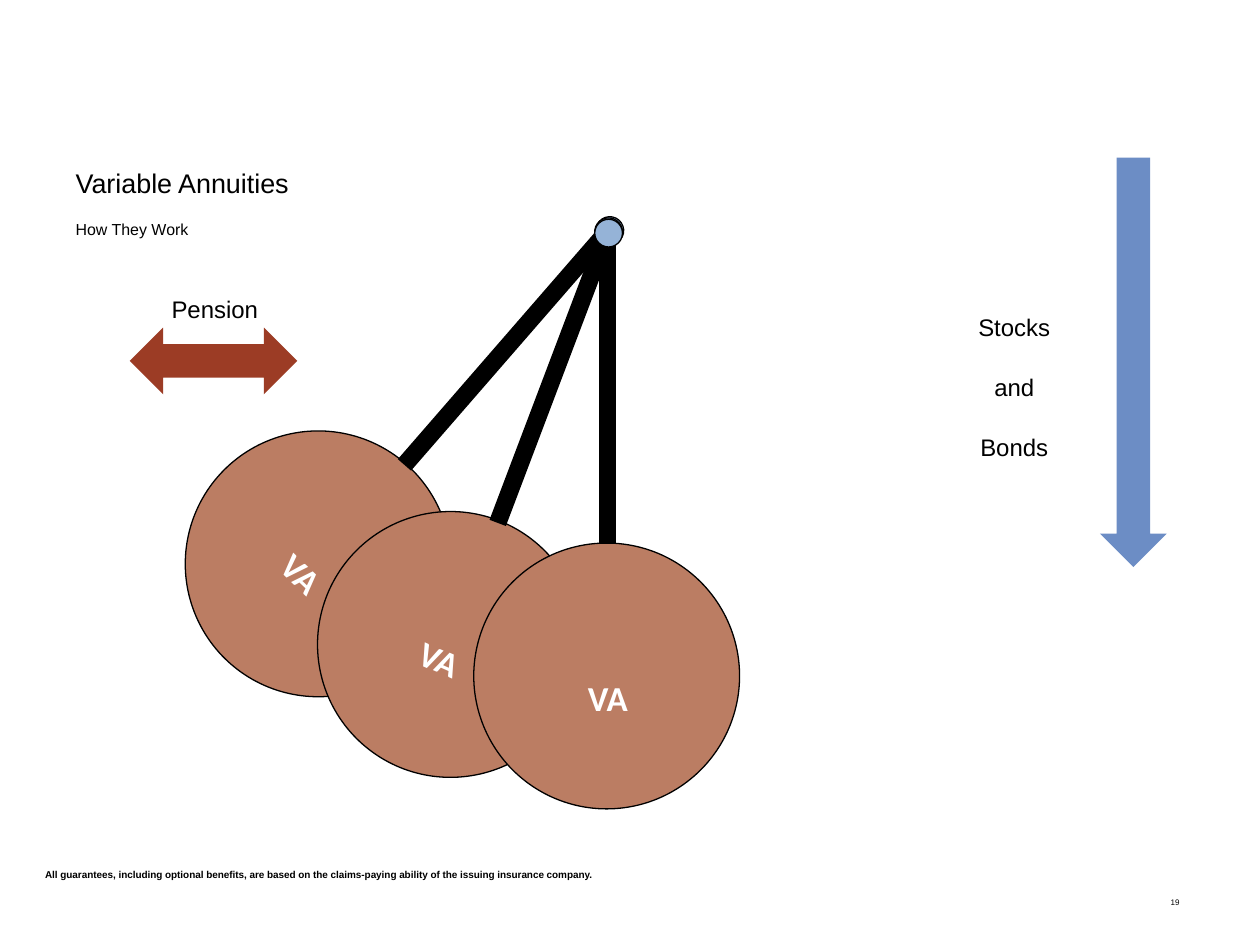
from dataclasses import dataclass

import pptx
import pptx.dml.color
import pptx.enum.shapes
import pptx.enum.text
import pptx.oxml
import pptx.util

Inches, Pt = pptx.util.Inches, pptx.util.Pt
SHAPE = pptx.enum.shapes.MSO_SHAPE
ALIGN = pptx.enum.text.PP_ALIGN
ANCHOR = pptx.enum.text.MSO_ANCHOR

COLORS = {"text": "000000", "label": "FFFFFF", "disc": "BB7D63", "pivot": "95B3D7",
          "market": "6C8DC5", "pension": "9C3C25"}
DISC, PIVOT = 2.11, 0.22
LABEL_W, LABEL_H = 1.43, 0.71


@dataclass
class Pendulum:
    """One position of the swing; points are (x, y) in inches."""
    disc: tuple[float, float]
    arm: tuple[float, float, float, float]
    pivot: tuple[float, float]
    angle: float
    label: tuple[float, float]
    label_angle: float


@dataclass
class Note:
    box: tuple[float, float, float, float]
    lines: list[str]
    size: float
    align: ALIGN = ALIGN.CENTER
    anchor: ANCHOR = ANCHOR.MIDDLE
    font: str = "Arial"
    color: str = "text"
    bold: bool = False
    spacing: float = 1.0
    top: float = 0.05
    bottom: float = 0.05
    rotation: float = 0


PENDULUMS = [
    Pendulum((1.47, 3.42), (4.8, 1.86, 3.21, 3.69), (4.73, 1.72), 40.9, (1.81, 4.06), 43.7),
    Pendulum((2.52, 4.06), (4.81, 1.88, 3.95, 4.15), (4.72, 1.73), 20.7, (2.85, 4.7), 24),
    Pendulum((3.76, 4.31), (4.82, 1.91, 4.82, 4.32), (4.72, 1.74), 0, (4.11, 4.99), 0),
]

NOTES = [
    Note((0, 2.1, 3.41, 0.7), ["Pension"], 13.7),
    Note((6.5, 2.18, 3.1, 1.31), ["Stocks\vand", "Bonds"], 13.7, anchor=ANCHOR.TOP, spacing=2.09),
    Note((0.26, 6.76, 9.5, 0.27),
         ["All guarantees, including optional benefits, are based on the claims-paying "
          "ability of the issuing insurance company."],
         5.7, ALIGN.LEFT, ANCHOR.BOTTOM, bold=True, bottom=0.04),
    Note((7.13, 7, 2.33, 0.5), ["19"], 4.6, ALIGN.RIGHT, ANCHOR.TOP, top=0.12),
]


def rgb(name: str) -> pptx.dml.color.RGBColor:
    return pptx.dml.color.RGBColor.from_string(COLORS[name])


def style_font(font, **values) -> None:
    for name, value in values.items():
        setattr(font, name, value)
    font.color.rgb = rgb("text")


def add_filled(shapes, kind: SHAPE, box: tuple, fill: str, outlined: bool = False,
               rotation: float = 0):
    s = shapes.add_shape(kind, *map(Inches, box))
    s.shadow.inherit = False
    s.rotation = rotation
    s.fill.solid()
    s.fill.fore_color.rgb = rgb(fill)
    if outlined:
        s.line.color.rgb = rgb("text")
        s.line.width = Pt(0.75)
    else:
        s.line.fill.background()
    return s


def add_arm(shapes, points: tuple) -> None:
    c = shapes.add_connector(pptx.enum.shapes.MSO_CONNECTOR.STRAIGHT, *map(Inches, points))
    c.line.color.rgb = rgb("text")
    c.line.width = Pt(10)
    sp_pr = c._element.spPr
    sp_pr.append(pptx.oxml.parse_xml(
        '<a:effectLst xmlns:a="http://schemas.openxmlformats.org/drawingml/2006/main"/>'))


def add_note(shapes, note: Note) -> None:
    s = shapes.add_textbox(*map(Inches, note.box))
    s.rotation = note.rotation
    tf = s.text_frame
    frame = {"word_wrap": True, "vertical_anchor": note.anchor,
             "margin_top": Inches(note.top), "margin_bottom": Inches(note.bottom)}
    for name, value in frame.items():
        setattr(tf, name, value)
    tf.text = "\n".join(note.lines)
    for p in tf.paragraphs:
        p.alignment = note.align
        p.line_spacing = note.spacing
        for r in p.runs:
            style_font(r.font, name=note.font, size=Pt(note.size), bold=note.bold)
            r.font.color.rgb = rgb(note.color)


def add_pendulum(shapes, item: Pendulum) -> None:
    group = shapes.add_group_shape().shapes
    add_filled(group, SHAPE.OVAL, (*item.disc, DISC, DISC), "disc", True, item.angle)
    add_arm(group, item.arm)
    add_filled(group, SHAPE.OVAL, (*item.pivot, PIVOT, PIVOT), "pivot", True, item.angle)
    add_note(group, Note((*item.label, LABEL_W, LABEL_H), ["VA"], 20, anchor=ANCHOR.BOTTOM,
                         font="Calibri", color="label", bold=True, bottom=0,
                         rotation=item.label_angle))


def set_title(title) -> None:
    title.left, title.top, title.width, title.height = map(Inches, (0.5, 1, 5.56, 0.8))
    tf = title.text_frame
    tf.text = "Variable Annuities\nHow They Work"
    tf.vertical_anchor = ANCHOR.TOP
    tf.margin_top = Inches(0.32)
    tf.auto_size = pptx.enum.text.MSO_AUTO_SIZE.NONE
    for p, size, before in zip(tf.paragraphs, (15.4, 9.1), (0, 12)):
        p.alignment = ALIGN.LEFT
        p.space_before = Pt(before)
        style_font(p.runs[0].font, name="Arial", size=Pt(size), bold=False)


def main() -> None:
    prs = pptx.Presentation()
    prs.slide_width, prs.slide_height = Inches(10), Inches(7.5)
    slide = prs.slides.add_slide(prs.slide_layouts[5])
    shapes = slide.shapes
    set_title(shapes.title)
    for item in PENDULUMS:
        add_pendulum(shapes, item)
    add_filled(shapes, SHAPE.RIGHT_ARROW, (7.37, 2.61, 3.25, 0.53), "market", rotation=90)
    add_filled(shapes, SHAPE.LEFT_RIGHT_ARROW, (1.03, 2.6, 1.33, 0.53), "pension")
    for note in NOTES:
        add_note(shapes, note)
    prs.save("out.pptx")


if __name__ == "__main__":
    main()
